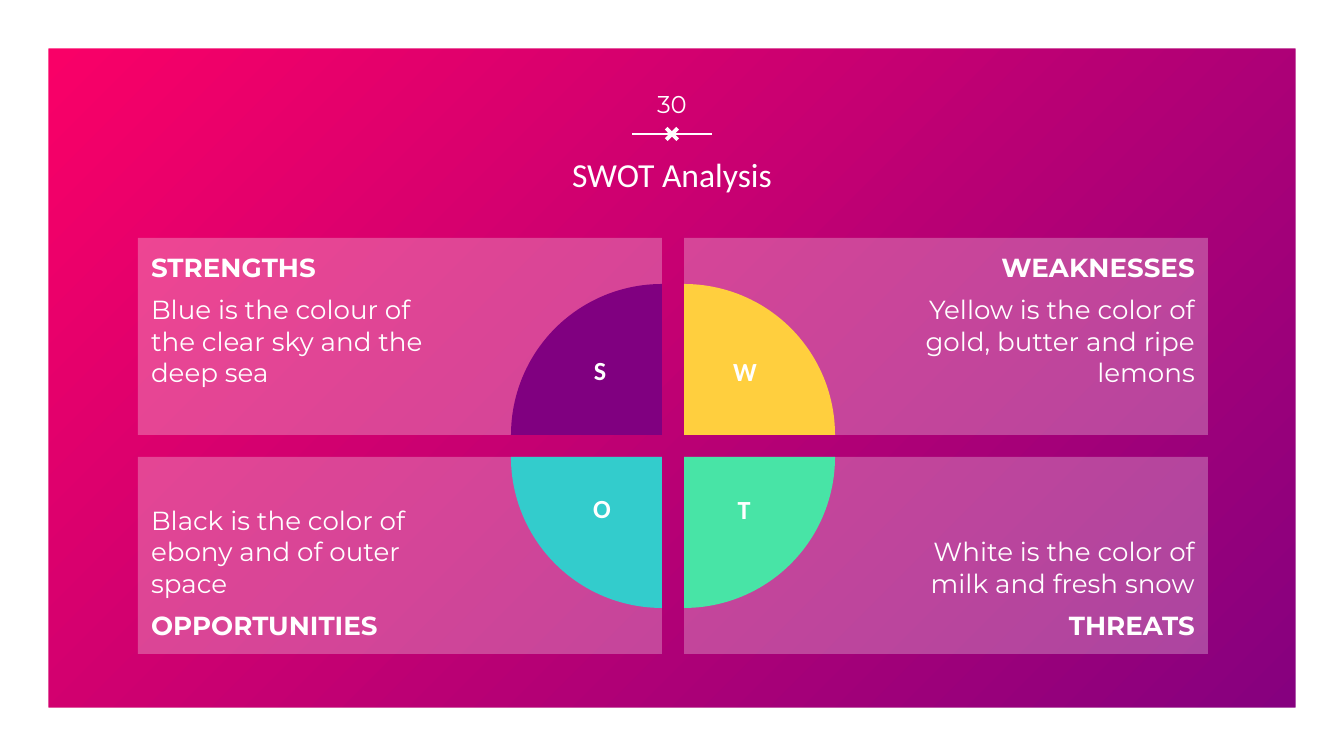
from pptx import Presentation
from pptx.dml.color import RGBColor
from pptx.enum.shapes import MSO_CONNECTOR, MSO_SHAPE
from pptx.enum.text import MSO_ANCHOR, PP_ALIGN
from pptx.oxml.ns import qn
from pptx.util import Pt
from lxml import etree

PX = 914400 / 134.4  # EMU per px
COLORS = {
    "white": "FFFFFF", "pink": "FF0066", "purple": "800080",
    "yellow": "FFCF3E", "green": "48E4A6", "teal": "33CCCC",
}
HEAD, BODY = "Calibri", "Montserrat"
LEFT, CENTER, RIGHT = PP_ALIGN.LEFT, PP_ALIGN.CENTER, PP_ALIGN.RIGHT
TOP, MIDDLE, BOTTOM = MSO_ANCHOR.TOP, MSO_ANCHOR.MIDDLE, MSO_ANCHOR.BOTTOM


def emu(*lengths):
    return [round(n * PX) for n in lengths]


def rgb(name):
    return RGBColor.from_string(COLORS[name])


def add_text(p, text, font=BODY, size=14, bold=False, align=LEFT, before=0, after=0):
    p.alignment = align
    p.space_before, p.space_after = Pt(before), Pt(after)
    r = p.add_run()
    r.text = text
    r.font.name, r.font.size, r.font.bold = font, Pt(size), bold
    r.font.color.rgb = rgb("white")


class Deck:
    def __init__(self, width, height):
        self.prs = Presentation()
        self.prs.slide_width, self.prs.slide_height = emu(width, height)
        self.s = self.prs.slides.add_slide(self.prs.slide_layouts[6])

    def background(self, *names):
        fill = self.s.background.fill
        fill.gradient()
        fill.gradient_angle = 315  # counter-clockwise, so down to the right
        for stop, name in zip(fill.gradient_stops, names):
            stop.color.rgb = rgb(name)

    def shape(self, kind, box, color, adj=(), alpha=None, rotation=0):
        sp = self.s.shapes.add_shape(kind, *emu(*box))
        sp.shadow.inherit = False
        sp.rotation = rotation
        for i, value in enumerate(adj):
            sp.adjustments[i] = value
        sp.fill.solid()
        sp.fill.fore_color.rgb = rgb(color)
        sp.line.fill.background()
        if alpha is not None:
            clr = sp.fill._xPr.find(qn("a:solidFill"))[0]
            etree.SubElement(clr, qn("a:alpha")).set("val", str(alpha * 1000))
        return sp

    def line(self, x1, y1, x2, y2, color="white", width=0.75):
        cx = self.s.shapes.add_connector(MSO_CONNECTOR.STRAIGHT, *emu(x1, y1, x2, y2))
        cx.line.color.rgb = rgb(color)
        cx.line.width = Pt(width)
        etree.SubElement(cx._element.spPr, qn("a:effectLst"))

    def frame(self, sp, anchor, insets):
        tf = sp.text_frame
        tf.word_wrap = True
        tf.vertical_anchor = anchor
        (tf.margin_left, tf.margin_top,
         tf.margin_right, tf.margin_bottom) = emu(*insets)
        return tf

    def label(self, box, text, anchor=MIDDLE, insets=(13, 13, 13, 13), **fmt):
        sp = self.s.shapes.add_textbox(*emu(*box))
        tf = self.frame(sp, anchor, insets)
        add_text(tf.paragraphs[0], text, align=CENTER, **fmt)

    def card(self, box, title, body, on_right, at_bottom):
        sp = self.shape(MSO_SHAPE.RECTANGLE, box, "white", alpha=27)
        insets = (202, 13, 13, 13) if on_right else (13, 13, 202, 13)
        tf = self.frame(sp, BOTTOM if at_bottom else TOP, insets)
        lines = [(title, True), (body, False)]
        if at_bottom:
            lines.reverse()
        align = RIGHT if on_right else LEFT
        first, second = tf.paragraphs[0], tf.add_paragraph()
        add_text(first, lines[0][0], bold=lines[0][1], align=align)
        add_text(second, lines[1][0], bold=lines[1][1], align=align, before=6, after=6)

    def quarter(self, cx, cy, radius, color, rotation):
        box = (cx - radius, cy - radius, 2 * radius, 2 * radius)
        self.shape(MSO_SHAPE.PIE, box, color, adj=(108, 162), rotation=rotation)


def main():
    deck = Deck(1344, 756)
    deck.background("pink", "purple")
    deck.shape(MSO_SHAPE.FRAME, (0, 0, 1344, 756), "white", adj=(0.064,))

    # Heading
    deck.line(632, 134, 712, 134)
    deck.shape(MSO_SHAPE.MATH_MULTIPLY, (661, 123, 22, 22), "white", adj=(0.174,))
    deck.label((48, 145, 1248, 58), "SWOT Analysis", font=HEAD, size=18)
    deck.label((632, 75, 80, 58), "30", size=13)

    # Grid: column, row, title, text, quarter colour and turn, letter centre and top
    x, y, width, height, gap, radius = 138, 238, 524, 197, 22, 151
    parts = [
        (0, 0, "STRENGTHS", "Blue is the colour of the clear sky and the deep sea",
         "purple", 0, 600, 347),
        (1, 0, "WEAKNESSES", "Yellow is the color of gold, butter and ripe lemons",
         "yellow", 90, 745, 348),
        (0, 1, "OPPORTUNITIES", "Black is the color of ebony and of outer space",
         "teal", 270, 602, 485),
        (1, 1, "THREATS", "White is the color of milk and fresh snow",
         "green", 180, 744, 486),
    ]

    # Cards
    for col, row, title, body, *_ in parts:
        box = (x + col * (width + gap), y + row * (height + gap), width, height)
        deck.card(box, title, body, on_right=col == 1, at_bottom=row == 1)

    # Quarters, each centred on the inner corner of its card
    for col, row, _, _, color, turn, *_ in parts:
        deck.quarter(x + width + col * gap, y + height + row * gap, radius, color, turn)

    # Letters
    for _, _, title, _, _, _, center, top in parts:
        deck.label((center - 37, top, 74, 58), title[0], anchor=TOP,
                   insets=(13, 7, 13, 7), font=HEAD, bold=True)

    deck.prs.save("out.pptx")


if __name__ == "__main__":
    main()
